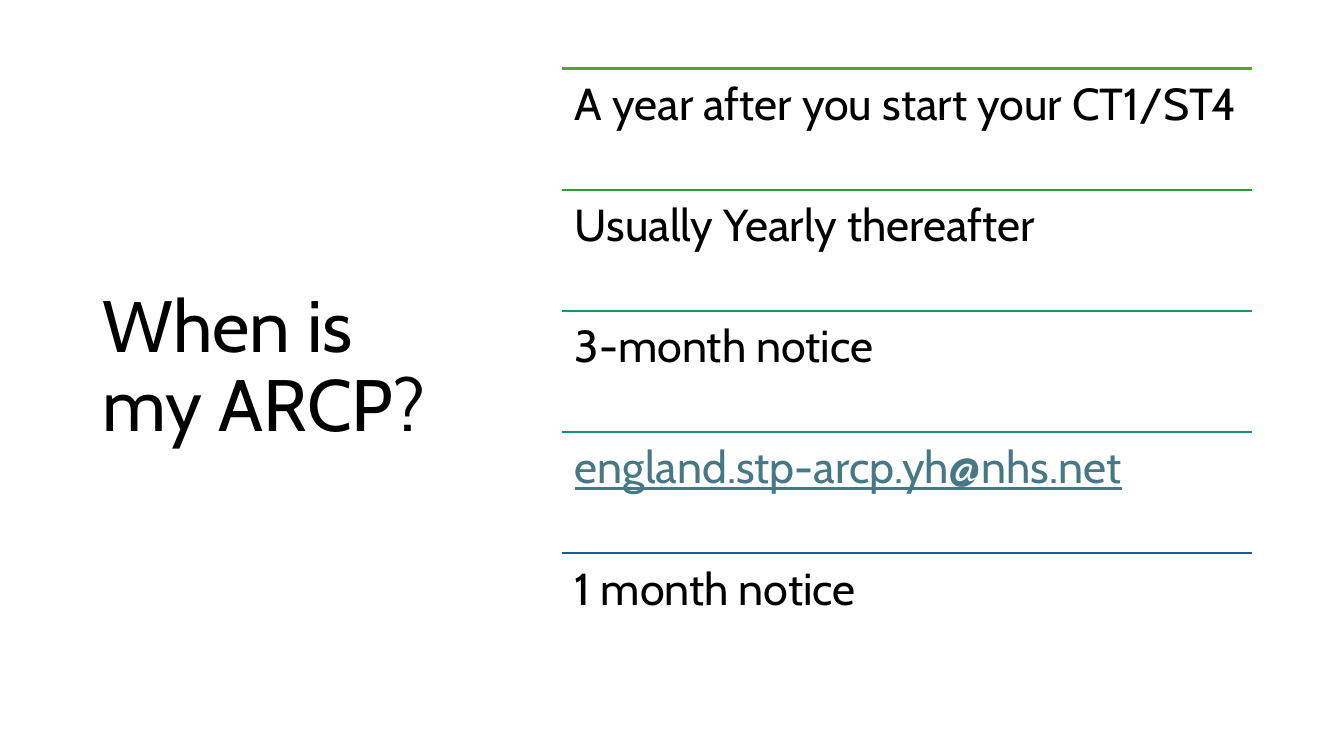
from dataclasses import dataclass

import pptx
import pptx.dml.color
import pptx.enum.shapes
import pptx.enum.text
import pptx.oxml.ns
import pptx.slide
import pptx.util
from lxml import etree

Inches = pptx.util.Inches
RGBColor = pptx.dml.color.RGBColor
Anchor = pptx.enum.text.MSO_ANCHOR

FONT = "Cabin"
BLACK = RGBColor(0x00, 0x00, 0x00)
LINK = RGBColor(0x46, 0x78, 0x86)
LIME = RGBColor(0x4E, 0xA7, 0x2E)
GREEN = RGBColor(0x27, 0x9F, 0x36)
JADE = RGBColor(0x20, 0x96, 0x5E)
TEAL = RGBColor(0x1A, 0x8C, 0x83)
BLUE = RGBColor(0x15, 0x60, 0x82)

LEFT, TOP, WIDTH, STEP = 5.57, 0.68, 6.85, 1.2025


@dataclass
class Row:
    text: str
    rule: RGBColor
    ink: RGBColor = BLACK
    under: bool = False


ROWS = [
    Row("A year after you start your CT1/ST4", LIME),
    Row("Usually Yearly thereafter", GREEN),
    Row("3-month notice", JADE),
    Row("england.stp-arcp.yh@nhs.net", TEAL, LINK, True),
    Row("1 month notice", BLUE),
]


def add_text(slide: pptx.slide.Slide, text: str, box: tuple[float, float, float, float],
             size: int, ink: RGBColor, inset: tuple[float, float],
             anchor: Anchor, under: bool = False) -> None:
    frame = slide.shapes.add_textbox(*map(Inches, box)).text_frame
    frame.word_wrap = True
    frame.vertical_anchor = anchor
    frame.margin_left = frame.margin_right = Inches(inset[0])
    frame.margin_top = frame.margin_bottom = Inches(inset[1])
    para = frame.paragraphs[0]
    para.text = text
    para.line_spacing = 0.9
    font = para.font
    font.name = FONT
    font.size = pptx.util.Pt(size)
    font.color.rgb = ink
    font.underline = under


def add_rule(slide: pptx.slide.Slide, top: float, color: RGBColor) -> None:
    rule = slide.shapes.add_connector(
        pptx.enum.shapes.MSO_CONNECTOR.STRAIGHT,
        Inches(LEFT), Inches(top), Inches(LEFT + WIDTH), Inches(top))
    rule.line.color.rgb = color
    rule.line.width = pptx.util.Pt(1.5)
    etree.SubElement(rule._element.spPr, pptx.oxml.ns.qn("a:effectLst"))


def add_row(slide: pptx.slide.Slide, row: Row, top: float) -> None:
    add_rule(slide, top, row.rule)
    add_text(slide, row.text, (LEFT, top, WIDTH, 1.2), 32, row.ink,
             (0.13, 0.13), Anchor.TOP, row.under)


def main() -> None:
    deck = pptx.Presentation()
    deck.slide_width = Inches(13.33)
    deck.slide_height = Inches(7.5)
    slide = deck.slides.add_slide(deck.slide_layouts[6])
    add_text(slide, "When is my ARCP?", (0.92, 0.61, 3.69, 6.09), 52, BLACK,
             (0.1, 0.05), Anchor.MIDDLE)
    for i, row in enumerate(ROWS):
        add_row(slide, row, TOP + i * STEP)
    deck.save("out.pptx")


if __name__ == "__main__":
    main()
